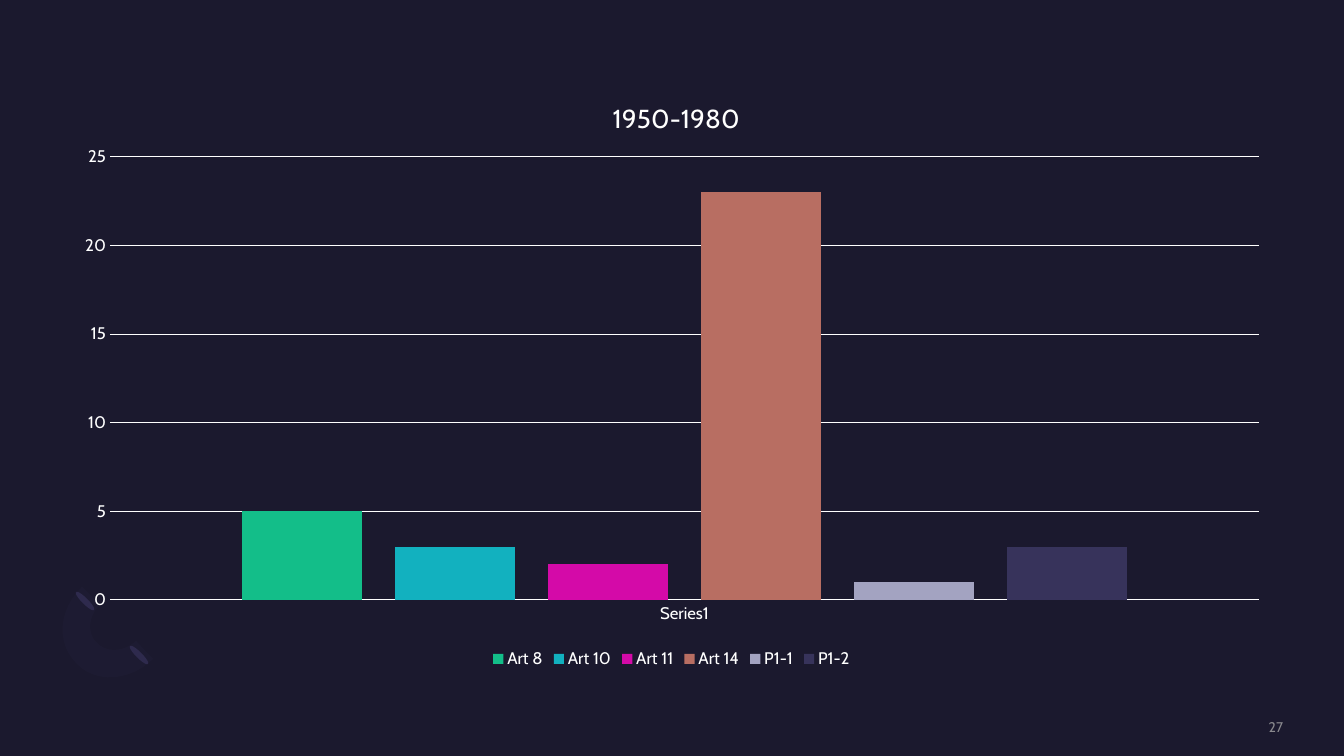
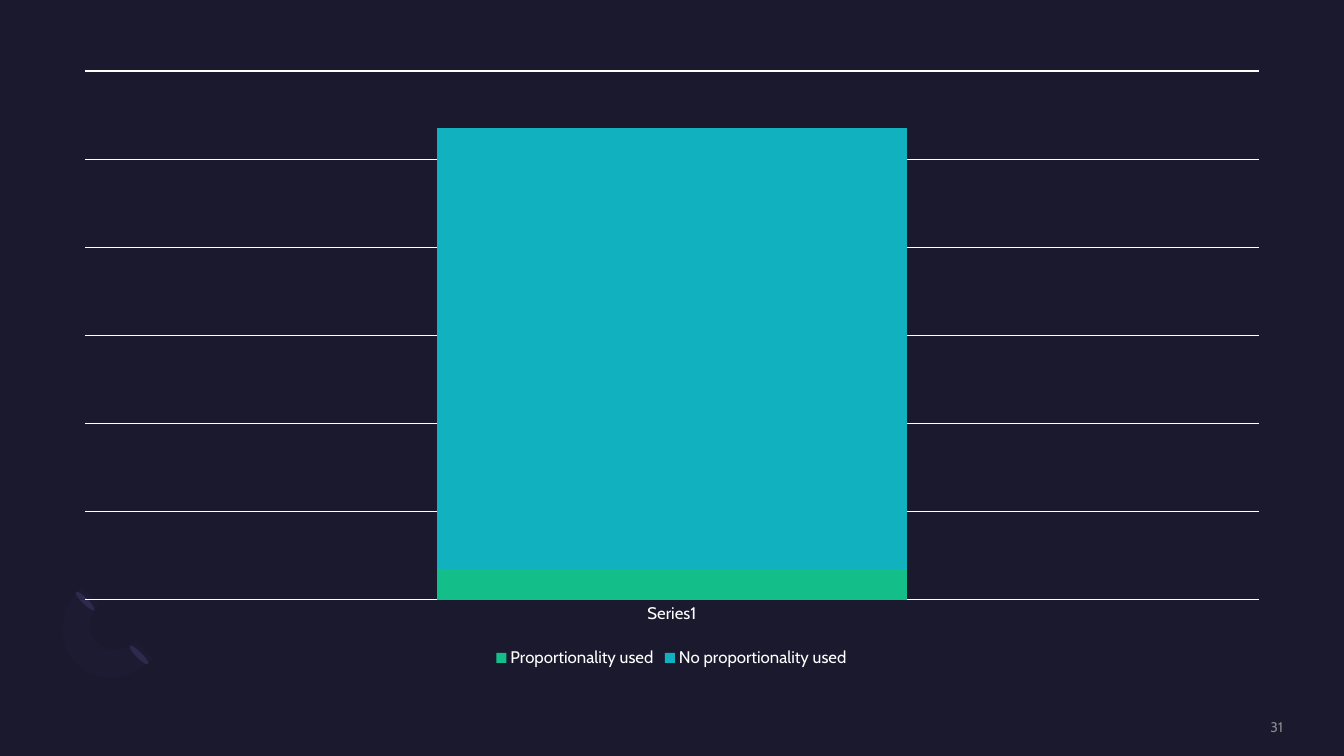
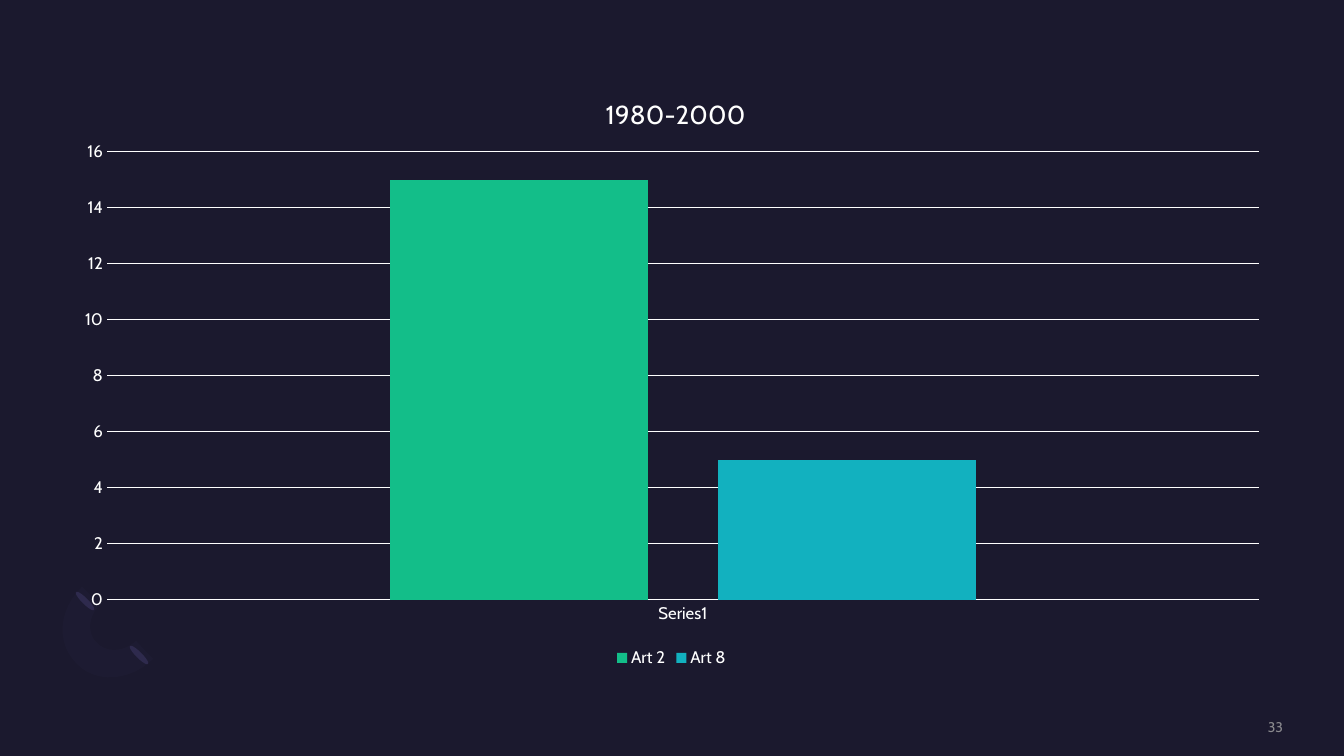
from collections import namedtuple
from dataclasses import dataclass

from lxml import etree
from pptx import Presentation
from pptx import util as u
from pptx.chart.data import CategoryChartData
from pptx.dml.color import RGBColor
from pptx.enum import chart as ch, shapes, text
from pptx.oxml import ns, parse_xml

Box = namedtuple("Box", "x y w h")
WIDE, HIGH = 1344, 756
SCALE = 12192000 / WIDE


@dataclass(frozen=True)
class Theme:
    font: str = "Cabin"
    back: str = "1B192E"
    ink: str = "FFFFFF"
    muted: str = "A6A6A6"
    leaf: str = "2C284A"
    ring: str = "7771B2"
    bars: tuple = ("13BE89", "12B1BF", "D40AA8", "B86E62", "A3A3C1", "37335B")
    title: float = 18.6
    label: int = 12
    small: int = 10
    rule: float = 0.75


THEME = Theme()


def px(n):
    return u.Emu(round(n * SCALE))


def place(box):
    return [px(n) for n in box]


def style(font, size, color=THEME.ink):
    font.name, font.size, font.bold = THEME.font, u.Pt(size), False
    font.color.rgb = RGBColor.from_string(color)


def paint(fill, color):
    fill.solid()
    fill.fore_color.rgb = RGBColor.from_string(color)


def fade(part, share):
    """Make the one solid colour inside part opaque to share percent."""
    color = next(part.iter(ns.qn("a:srgbClr")))
    etree.SubElement(color, ns.qn("a:alpha")).set("val", str(share * 1000))


def finish(shape, color):
    shape.shadow.inherit = False
    shape.line.fill.background()
    paint(shape.fill, color)


def curve(start, one, two, end, steps=12):
    """Points along a cubic curve, without its start."""
    for i in range(1, steps + 1):
        t = i / steps
        s = 1 - t
        yield tuple(s**3 * a + 3 * s * s * t * b + 3 * s * t * t * c + t**3 * d
                    for a, b, c, d in zip(start, one, two, end))


def add_mark(slide, box):
    """Two leaves and a faint open ring in the lower left corner."""
    for dx, dy in ((80, 55), (26, 1)):
        leaf = slide.shapes.add_shape(
            shapes.MSO_SHAPE.OVAL, *place((box.x + dx, box.y + dy, 6, 26)))
        leaf.rotation = 135
        finish(leaf, THEME.leaf)

    start = (21, 77)
    arcs = (
        ((0, 57), (2, 23), (26, 0)),
        ((44, 18),),
        ((32, 29), (31, 47), (41, 56)),
        ((51, 66), (68, 65), (80, 54)),
        ((97, 72),),
        ((75, 94), (40, 97), start),
    )
    dots = [start]
    for arc in arcs:
        dots += arc if len(arc) == 1 else curve(dots[-1], *arc)
    dots = [(px(box.x + x), px(box.y + y)) for x, y in dots]
    pen = slide.shapes.build_freeform(*dots[0])
    pen.add_line_segments(dots[1:], close=True)
    ring = pen.convert_to_shape()
    finish(ring, THEME.ring)
    fade(ring.fill._xPr, 3)


def add_number(slide, box, number):
    frame = slide.shapes.add_textbox(*place(box)).text_frame
    frame.margin_left = frame.margin_right = 0
    frame.margin_top = frame.margin_bottom = 0
    frame.word_wrap = True
    frame.vertical_anchor = text.MSO_ANCHOR.MIDDLE
    frame.text = str(number)
    line = frame.paragraphs[0]
    line.alignment = text.PP_ALIGN.RIGHT
    run = line.runs[0]
    style(run.font, THEME.small, THEME.muted)
    fade(run._r, 80)


def pin(part, box, spot, inner=False):
    """Fix a chart part at spot, both boxes being in px on the slide."""
    vals = {"x": (spot.x - box.x) / box.w, "y": (spot.y - box.y) / box.h}
    if inner:
        vals.update(w=spot.w / box.w, h=spot.h / box.h)
    tags = '<c:layoutTarget val="inner"/>' if inner else ""
    tags += "".join(f'<c:{k}Mode val="edge"/>' for k in "xy")
    tags += "".join(f'<c:{k} val="{v:.4f}"/>' for k, v in vals.items())
    for old in part.findall(ns.qn("c:layout")):
        part.remove(old)
    layout = parse_xml(f'<c:layout {ns.nsdecls("c")}><c:manualLayout>{tags}'
                       '</c:manualLayout></c:layout>')
    head = part.find(ns.qn("c:tx"))
    if head is None:
        part.insert(0, layout)
    else:
        head.addnext(layout)


def set_title(chart, box, title, spot):
    chart.has_title = bool(title)
    if not title:
        return
    frame = chart.chart_title.text_frame
    frame.text = title
    style(frame.paragraphs[0].runs[0].font, THEME.title)
    chart.chart_title.include_in_layout = False
    pin(chart.chart_title._element, box, spot)


def set_axes(chart, top, step, scale):
    cat, val = chart.category_axis, chart.value_axis
    for axis in (cat, val):
        axis.major_tick_mark = axis.minor_tick_mark = ch.XL_TICK_MARK.NONE
        style(axis.tick_labels.font, THEME.label)
    val.minimum_scale, val.maximum_scale, val.major_unit = 0, top, step
    val.has_major_gridlines = True
    val.visible = scale
    val.format.line.fill.background()
    for line in (cat.format.line, val.major_gridlines.format.line):
        line.width = u.Pt(THEME.rule)
        paint(line.fill, THEME.ink)


def add_bars(slide, box, plot, rows, top, step, title="", spot=None,
             stacked=False):
    data = CategoryChartData()
    data.categories = ["Series1"]
    for name, value in rows:
        data.add_series(name, [value])
    kind = ch.XL_CHART_TYPE
    kind = kind.COLUMN_STACKED if stacked else kind.COLUMN_CLUSTERED
    chart = slide.shapes.add_chart(kind, *place(box), data).chart
    style(chart.font, THEME.small)
    set_title(chart, box, title, spot)
    set_axes(chart, top, step, not stacked)
    chart.has_legend = True
    chart.legend.position = ch.XL_LEGEND_POSITION.BOTTOM
    chart.legend.include_in_layout = False
    style(chart.legend.font, THEME.label)
    bars = chart.plots[0]
    bars.vary_by_categories = False
    bars.gap_width, bars.overlap = (150, 100) if stacked else (219, -27)
    for row, color in zip(bars.series, THEME.bars):
        paint(row.format.fill, color)
    pin(chart._chartSpace.chart.plotArea, box, plot, inner=True)


PAGES = (
    (27, dict(
        box=Box(60, 72, 1223, 601), plot=Box(110, 157, 1149, 443),
        title="1950-1980", spot=Box(608, 96, 0, 0), top=25, step=5,
        rows=(("Art 8", 5), ("Art 10", 3), ("Art 11", 2), ("Art 14", 23),
              ("P1-1", 1), ("P1-2", 3)))),
    (31, dict(
        box=Box(60, 60, 1223, 612), plot=Box(85, 71, 1174, 529),
        top=120, step=20, stacked=True,
        rows=(("Proportionality used", 7), ("No proportionality used", 100)))),
    (33, dict(
        box=Box(60, 66, 1223, 606), plot=Box(107, 152, 1152, 448),
        title="1980-2000", spot=Box(601, 91, 0, 0), top=16, step=2,
        rows=(("Art 2", 15), ("Art 8", 5)))),
)


def main():
    deck = Presentation()
    deck.slide_width, deck.slide_height = px(WIDE), px(HIGH)
    paint(deck.slide_master.background.fill, THEME.back)
    for number, bars in PAGES:
        slide = deck.slides.add_slide(deck.slide_layouts[6])
        add_mark(slide, Box(56, 587, 97, 97))
        add_bars(slide, **bars)
        add_number(slide, Box(1097, 718, 186, 17), number)
    deck.save("out.pptx")


if __name__ == "__main__":
    main()
